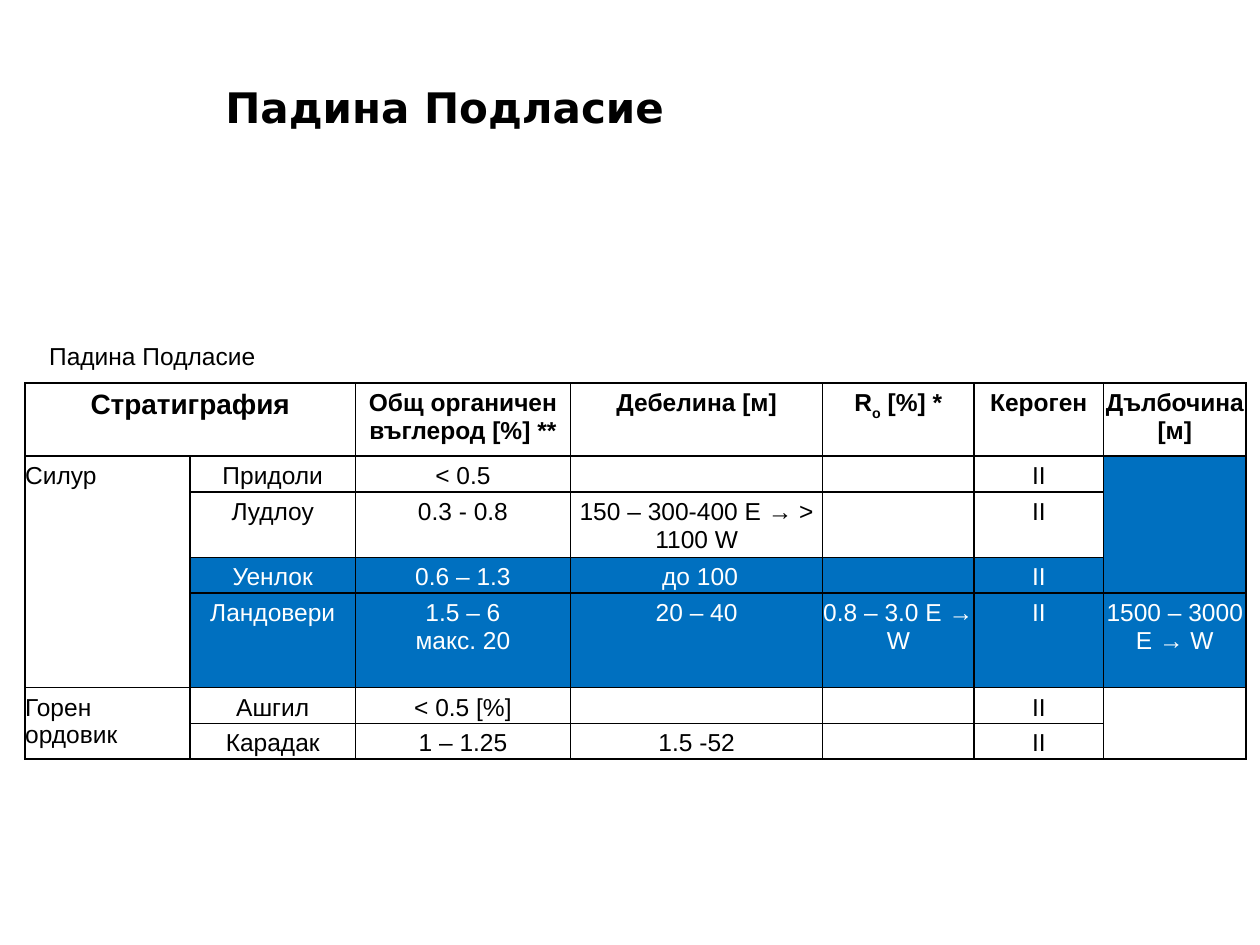
from lxml.etree import SubElement
from pptx import Presentation
from pptx.dml.color import RGBColor
from pptx.enum.text import MSO_ANCHOR, PP_ALIGN
from pptx.oxml.ns import qn
from pptx.util import Inches, Pt

BLACK, WHITE, BLUE = "000000", "FFFFFF", "0070C0"
TITLE = "Падина Подласие"

# Text between underscores is subscript; a line feed starts a new paragraph.
ROWS = [
    ["Стратиграфия", "", "Общ органичен въглерод [%] **", "Дебелина [м]",
     "R_o_ [%] *", "Кероген", "Дълбочина [м]"],
    ["Силур", "Придоли", "< 0.5", "", "", "II", ""],
    ["", "Лудлоу", "0.3 - 0.8", "150 – 300-400 E → > 1100 W", "", "II", ""],
    ["", "Уенлок", "0.6 – 1.3", " до 100", "", "II", ""],
    ["", "Ландовери", "1.5 – 6\nмакс. 20", "20 – 40", "0.8 – 3.0 E → W", "II",
     "1500 – 3000\nE → W"],
    ["Горен ордовик", "Ашгил", "< 0.5 [%]", "", "", "II", ""],
    ["", "Карадак", "1 – 1.25", "1.5 -52", "", "II", ""],
]
COLUMN_WIDTHS = [1.31, 1.31, 1.71, 2, 1.2, 1.03, 1.13]
ROW_HEIGHTS = [0.58, 0.28, 0.52, 0.28, 0.75, 0.28, 0.28]
MERGES = [((0, 0), (0, 1)), ((1, 0), (4, 0)), ((1, 6), (3, 6)),
          ((5, 0), (6, 0)), ((5, 6), (6, 6))]
BLUE_CELLS = {(row, column) for row in (3, 4) for column in range(1, 7)} | {(1, 6), (2, 6)}


def color(value):
    return RGBColor.from_string(value)


def add_run(paragraph, text, size, font="Arial", fill=BLACK, bold=False):
    run = paragraph.add_run()
    run.text = text
    run.font.size, run.font.name, run.font.bold = Pt(size), font, bold
    run.font.color.rgb = color(fill)
    return run


def set_margins(target, left=0.0, top=0.05, right=0.0, bottom=0.0):
    target.margin_left, target.margin_top = Inches(left), Inches(top)
    target.margin_right, target.margin_bottom = Inches(right), Inches(bottom)


def add_text_box(slide, box, text, size, font, bold, margins, wrap):
    frame = slide.shapes.add_textbox(*map(Inches, box)).text_frame
    frame.word_wrap = wrap
    frame.vertical_anchor = MSO_ANCHOR.MIDDLE
    set_margins(frame, *margins)
    add_run(frame.paragraphs[0], text, size, font, bold=bold)


def add_borders(cell):
    properties = cell._tc.get_or_add_tcPr()
    for side in ("a:lnL", "a:lnR", "a:lnT", "a:lnB"):
        line = SubElement(properties, qn(side), w=str(Pt(1)))
        fill = SubElement(line, qn("a:solidFill"))
        SubElement(fill, qn("a:srgbClr"), val=BLACK)


def fill_cell(cell, text, row, column):
    set_margins(cell)
    add_borders(cell)
    is_blue = (row, column) in BLUE_CELLS
    if is_blue:
        cell.fill.solid()
        cell.fill.fore_color.rgb = color(BLUE)
    else:
        cell.fill.background()
    size = 16 if (row, column) == (0, 0) else 14
    for index, line in enumerate(text.split("\n")):
        frame = cell.text_frame
        paragraph = frame.add_paragraph() if index else frame.paragraphs[0]
        paragraph.alignment = PP_ALIGN.LEFT if column == 0 and row else PP_ALIGN.CENTER
        for position, part in enumerate(line.split("_") if line else []):
            run = add_run(paragraph, part, size, fill=WHITE if is_blue else BLACK, bold=row == 0)
            if position % 2:
                run.font._element.set("baseline", "-30000")
        # Keeps rows with empty cells from growing to the default text size
        SubElement(paragraph._p, qn("a:endParaRPr"), sz=str(size * 100))


def add_strata_table(slide):
    shape = slide.shapes.add_table(len(ROWS), len(COLUMN_WIDTHS), Inches(0.2), Inches(3.04),
                                   Inches(sum(COLUMN_WIDTHS)), Inches(sum(ROW_HEIGHTS)))
    table = shape.table
    table.first_row = table.horz_banding = False
    for column, width in zip(table.columns, COLUMN_WIDTHS):
        column.width = Inches(width)
    for row, height in zip(table.rows, ROW_HEIGHTS):
        row.height = Inches(height)
    for row, texts in enumerate(ROWS):
        for column, text in enumerate(texts):
            fill_cell(table.cell(row, column), text, row, column)
    for first, last in MERGES:
        table.cell(*first).merge(table.cell(*last))


def main():
    presentation = Presentation()
    presentation.slide_width, presentation.slide_height = Inches(10), Inches(7.5)
    slide = presentation.slides.add_slide(presentation.slide_layouts[6])
    add_text_box(slide, (1.69, 0.52, 7.81, 1.03), TITLE, 24, "DejaVu Sans", True,
                 (0.1, 0.05, 0.1, 0.42), True)
    add_strata_table(slide)
    add_text_box(slide, (0.39, 2.65, 1.65, 0.29), TITLE, 14, "Arial", False,
                 (0, 0.05, 0, 0), False)
    presentation.save("out.pptx")


if __name__ == "__main__":
    main()
